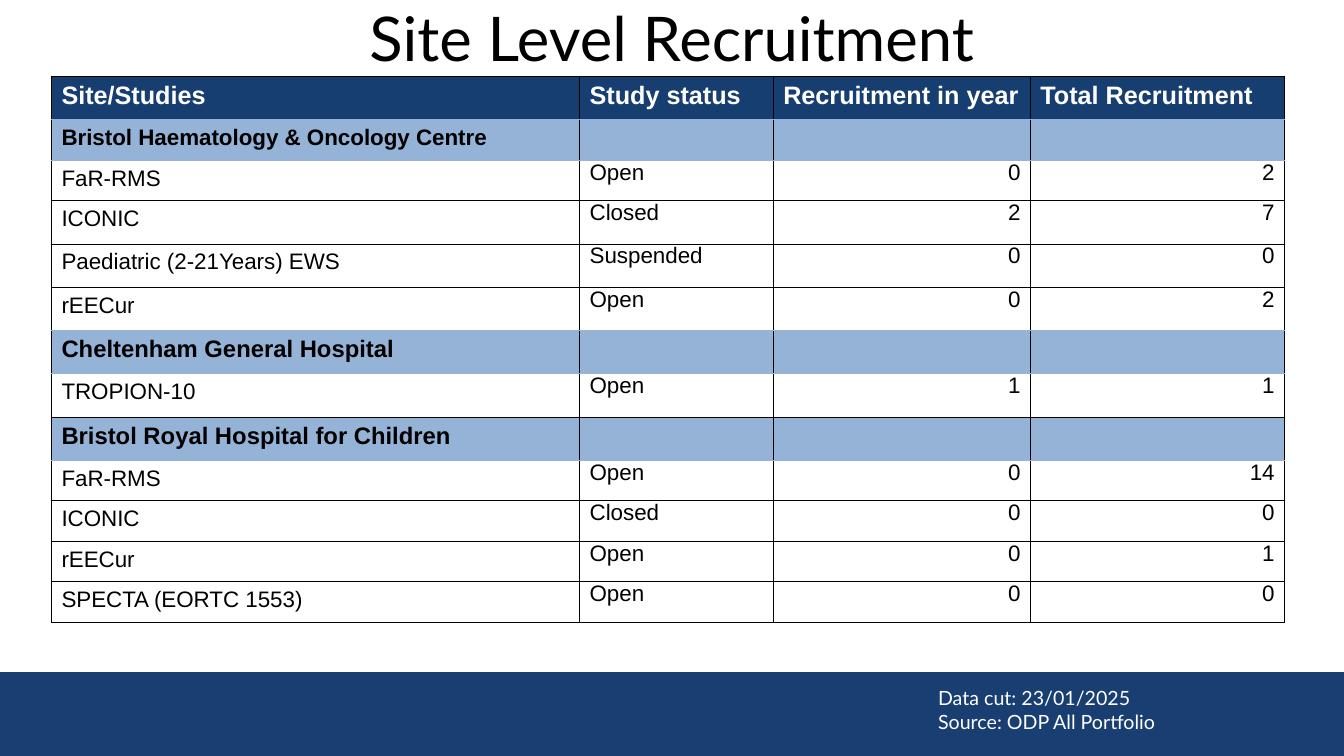
from lxml.etree import SubElement
from pptx import Presentation
from pptx.dml.color import RGBColor
from pptx.enum.shapes import MSO_SHAPE
from pptx.enum.text import MSO_ANCHOR, MSO_AUTO_SIZE, PP_ALIGN
from pptx.oxml.ns import qn
from pptx.util import Cm, Pt

BLACK = RGBColor(0x00, 0x00, 0x00)
WHITE = RGBColor(0xFF, 0xFF, 0xFF)
FOOTER_NAVY = RGBColor(0x19, 0x3E, 0x72)
HEADER_NAVY = RGBColor(0x17, 0x3E, 0x71)
SITE_BLUE = RGBColor(0x95, 0xB3, 0xD7)

TITLE = "Site Level Recruitment"
FOOTER_LINES = ["Data cut: 23/01/2025", "Source: ODP All Portfolio"]
HEADINGS = ["Site/Studies", "Study status", "Recruitment in year", "Total Recruitment"]
# Site name, text size, colour of the edge above, studies
SITES = [
    ("Bristol Haematology & Oncology Centre", 16, SITE_BLUE, [
        ("FaR-RMS", "Open", 0, 2),
        ("ICONIC", "Closed", 2, 7),
        ("Paediatric (2-21Years) EWS", "Suspended", 0, 0),
        ("rEECur", "Open", 0, 2),
    ]),
    ("Cheltenham General Hospital", 17, SITE_BLUE, [
        ("TROPION-10", "Open", 1, 1),
    ]),
    ("Bristol Royal Hospital for Children", 17, BLACK, [
        ("FaR-RMS", "Open", 0, 14),
        ("ICONIC", "Closed", 0, 0),
        ("rEECur", "Open", 0, 1),
        ("SPECTA (EORTC 1553)", "Open", 0, 0),
    ]),
]
COLUMN_WIDTHS = [13.31, 4.88, 6.48, 6.4]
TALL, SHORT = 1.09, 1.02
ROW_HEIGHTS = [TALL] + [SHORT] * 2 + [TALL] * 6 + [SHORT] * 4
TABLE_LEFT, TABLE_TOP = 1.3, 1.93
CELL_INSET = 0.25


def write_text(frame, *lines, size, font="Arial", color=BLACK, bold=False,
               align=PP_ALIGN.LEFT, spacing=None, inset=CELL_INSET):
    frame.margin_left = frame.margin_right = Cm(CELL_INSET)
    frame.margin_top = frame.margin_bottom = Cm(inset)
    for index, line in enumerate(lines):
        paragraph = frame.add_paragraph() if index else frame.paragraphs[0]
        paragraph.alignment = align
        paragraph.line_spacing = spacing
        run = paragraph.add_run()
        run.text = line
        run.font.name = font
        run.font.size = Pt(size)
        run.font.bold = bold
        run.font.color.rgb = color


def style_cell(cell, fill, top, bottom):
    properties = cell._tc.get_or_add_tcPr()
    edges = {"a:lnL": BLACK, "a:lnR": BLACK, "a:lnT": top, "a:lnB": bottom}
    for tag, color in edges.items():
        line = SubElement(properties, qn(tag), w=str(Pt(0.75)))
        SubElement(SubElement(line, qn("a:solidFill")), qn("a:srgbClr"), val=str(color))
    cell.fill.solid()
    cell.fill.fore_color.rgb = fill


def table_rows():
    """Return cell texts, fill, top edge and first-column text format of each row."""
    rows = [(HEADINGS, HEADER_NAVY, BLACK, dict(size=18, color=WHITE, bold=True))]
    for site, size, edge, studies in SITES:
        rows.append(([site, "", "", ""], SITE_BLUE, edge, dict(size=size, bold=True)))
        for index, study in enumerate(studies):
            top = BLACK if index else SITE_BLUE
            rows.append(([str(value) for value in study], WHITE, top, dict(size=16)))
    return rows


def add_recruitment_table(slide):
    rows = table_rows()
    frame = slide.shapes.add_table(
        len(rows), len(HEADINGS), Cm(TABLE_LEFT), Cm(TABLE_TOP),
        Cm(sum(COLUMN_WIDTHS)), Cm(sum(ROW_HEIGHTS)))
    table = frame.table
    table.first_row = table.horz_banding = False
    for column, width in zip(table.columns, COLUMN_WIDTHS):
        column.width = Cm(width)
    tops = [row[2] for row in rows] + [BLACK]
    for row_index, (texts, fill, top, text_format) in enumerate(rows):
        table.rows[row_index].height = Cm(ROW_HEIGHTS[row_index])
        for column_index, text in enumerate(texts):
            cell = table.cell(row_index, column_index)
            style_cell(cell, fill, top, tops[row_index + 1])
            if not text:
                cell.margin_top = cell.margin_bottom = 0
                continue
            is_value = fill == WHITE and column_index > 0
            is_number = is_value and column_index > 1
            cell.margin_left = cell.margin_right = Cm(CELL_INSET)
            cell.margin_top = cell.margin_bottom = Cm(CELL_INSET)
            write_text(cell.text_frame, text, spacing=0.5 if is_value else 0.8,
                       align=PP_ALIGN.RIGHT if is_number else PP_ALIGN.LEFT, **text_format)


def main():
    presentation = Presentation()
    presentation.slide_width, presentation.slide_height = Cm(33.87), Cm(19.05)
    slide = presentation.slides.add_slide(presentation.slide_layouts[5])

    footer_bar = slide.shapes.add_shape(
        MSO_SHAPE.RECTANGLE, 0, Cm(16.94), presentation.slide_width, Cm(2.11))
    footer_bar.shadow.inherit = False
    footer_bar.fill.solid()
    footer_bar.fill.fore_color.rgb = FOOTER_NAVY
    footer_bar.line.fill.background()

    add_recruitment_table(slide)

    title = slide.shapes.title
    title.left, title.top, title.width, title.height = Cm(2.33), Cm(0.28), Cm(29.21), Cm(1.55)
    title.text_frame.auto_size = MSO_AUTO_SIZE.NONE
    title.text_frame.vertical_anchor = MSO_ANCHOR.MIDDLE
    write_text(title.text_frame, TITLE, size=44, font="Lato",
               align=PP_ALIGN.CENTER, spacing=0.9, inset=0.13)

    footer = slide.shapes.add_textbox(Cm(23.39), Cm(17.04), Cm(7.9), Cm(1.7))
    footer.text_frame.word_wrap = True
    write_text(footer.text_frame, *FOOTER_LINES, size=14, font="Lato", color=WHITE)

    presentation.save("out.pptx")


if __name__ == "__main__":
    main()
